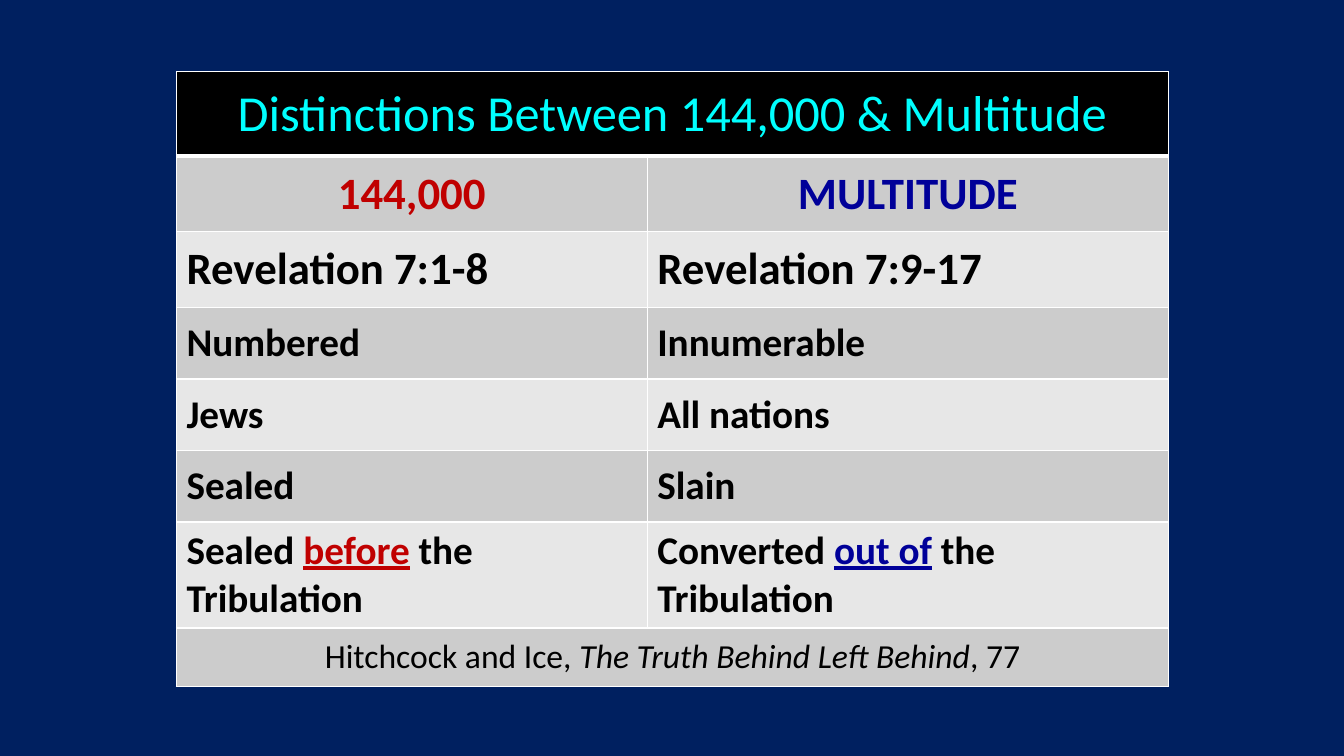
"""Build a slide with a table contrasting the 144,000 and the multitude."""
from dataclasses import dataclass

from lxml.etree import SubElement
from pptx import Presentation
from pptx.dml.color import RGBColor as Rgb
from pptx.enum.text import MSO_ANCHOR as Anchor, PP_ALIGN as Align
from pptx.oxml import parse_xml
from pptx.oxml.ns import nsdecls, qn
from pptx.util import Inches, Pt

COLORS = {
    "navy": "002060", "black": "000000", "white": "FFFFFF", "cyan": "00FFFF",
    "red": "C00000", "blue": "000099", "dark": "CCCCCC", "light": "E7E7E7",
}
COLUMN_WIDTHS = (4.67, 5.17)
HANGING = 0.51


@dataclass(frozen=True)
class Span:
    text: str
    color: str = "black"
    underline: bool = False
    italic: bool = False


@dataclass(frozen=True)
class Row:
    height: float
    size: int
    cells: tuple[tuple[Span, ...], ...]
    bold: bool = True
    centered: bool = False
    hanging: bool = True


def pair(left: str, right: str) -> tuple[tuple[Span, ...], ...]:
    return (Span(left),), (Span(right),)


ROWS = (
    Row(0.84, 36, ((Span("Distinctions Between 144,000 & Multitude", "cyan"),),),
        bold=False, centered=True, hanging=False),
    Row(0.75, 32, ((Span("144,000", "red"),), (Span("MULTITUDE", "blue"),)),
        centered=True),
    Row(0.75, 32, pair("Revelation 7:1-8", "Revelation 7:9-17")),
    Row(0.71, 28, pair("Numbered", "Innumerable")),
    Row(0.71, 28, pair("Jews", "All nations")),
    Row(0.71, 28, pair("Sealed", "Slain")),
    Row(0.71, 28, (
        (Span("Sealed "), Span("before", "red", underline=True),
         Span(" the Tribulation")),
        (Span("Converted "), Span("out of", "blue", underline=True),
         Span(" the Tribulation")),
    ), hanging=False),
    Row(0.58, 24, ((Span("Hitchcock and Ice, "),
                    Span("The Truth Behind Left Behind", italic=True),
                    Span(", 77")),),
        bold=False, centered=True, hanging=False),
)


def add_text(paragraph, text: str, *, size: int, color: str, bold: bool,
             italic: bool, underline: bool) -> None:
    run = paragraph.add_run()
    run.text = text
    font = run.font
    font.name, font.size = "Calibri", Pt(size)
    font.bold, font.italic, font.underline = bold, italic, underline
    font.color.rgb = Rgb.from_string(COLORS[color])


def set_borders(cell, top: float, bottom: float) -> None:
    properties = cell._tc.get_or_add_tcPr()
    widths = {"lnL": 1, "lnR": 1, "lnT": top, "lnB": bottom}
    for position, (side, width) in enumerate(widths.items()):
        line = parse_xml(f'<a:{side} {nsdecls("a")} w="{Pt(width)}"/>')
        fill = SubElement(line, qn("a:solidFill"))
        SubElement(fill, qn("a:srgbClr"), val=COLORS["white"])
        properties.insert(position, line)


def fill_cell(cell, row: Row, spans: tuple[Span, ...]) -> None:
    cell.vertical_anchor = Anchor.MIDDLE
    paragraph = cell.text_frame.paragraphs[0]
    paragraph.alignment = Align.CENTER if row.centered else Align.LEFT
    if row.hanging:
        layout = paragraph._p.get_or_add_pPr()
        layout.set("marL", str(Inches(HANGING)))
        layout.set("indent", str(-Inches(HANGING)))
    for span in spans:
        add_text(paragraph, span.text, size=row.size, color=span.color,
                 bold=row.bold, italic=span.italic, underline=span.underline)


def add_comparison(slide) -> None:
    frame = slide.shapes.add_table(
        len(ROWS), len(COLUMN_WIDTHS),
        Inches(1.75), Inches(0.71), Inches(9.83), Inches(6.08))
    table = frame.table
    for column, width in zip(table.columns, COLUMN_WIDTHS):
        column.width = Inches(width)
    for index, row in enumerate(ROWS):
        table.rows[index].height = Inches(row.height)
        shade = "black" if index == 0 else "dark" if index % 2 else "light"
        cells = [table.cell(index, column) for column in range(len(COLUMN_WIDTHS))]
        for cell in cells:
            cell.fill.solid()
            cell.fill.fore_color.rgb = Rgb.from_string(COLORS[shade])
            set_borders(cell, top=3 if index == 1 else 1,
                        bottom=3 if index == 0 else 1)
        if len(row.cells) == 1:
            cells[0].merge(cells[-1])
        for cell, spans in zip(cells, row.cells):
            fill_cell(cell, row, spans)
    frame.height = Inches(6.08)


def main() -> None:
    deck = Presentation()
    deck.slide_width, deck.slide_height = Inches(13.33), Inches(7.5)
    slide = deck.slides.add_slide(deck.slide_layouts[6])
    slide.background.fill.solid()
    slide.background.fill.fore_color.rgb = Rgb.from_string(COLORS["navy"])
    add_comparison(slide)
    deck.save("out.pptx")


if __name__ == "__main__":
    main()
